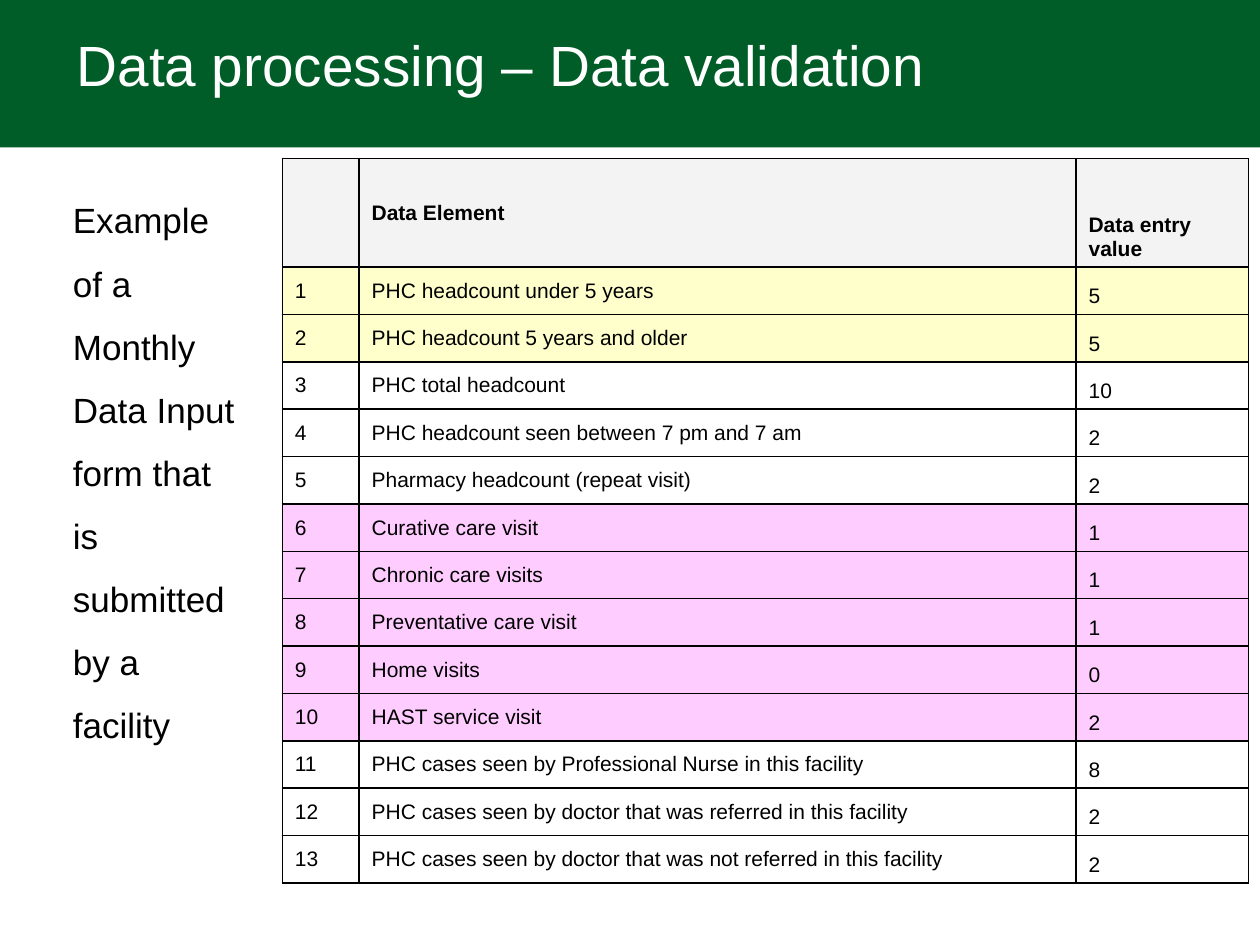
from lxml import etree
from pptx import Presentation
from pptx.dml.color import RGBColor
from pptx.enum.shapes import MSO_SHAPE
from pptx.enum.text import MSO_ANCHOR
from pptx.oxml.ns import qn
from pptx.util import Inches, Pt

RECTANGLE = MSO_SHAPE.RECTANGLE
MIDDLE, BOTTOM = MSO_ANCHOR.MIDDLE, MSO_ANCHOR.BOTTOM
COLORS = {
    "green": "005D28", "white": "FFFFFF", "black": "000000",
    "header": "F3F3F3", "yellow": "FFFFCC", "pink": "FFCCFF",
}


def add_run(para, text, size, color="black", bold=False):
    span = para.add_run()
    span.text = text
    span.font.name = "Arial"
    span.font.size = Pt(size)
    span.font.bold = bold
    span.font.color.rgb = RGBColor.from_string(COLORS[color])


def add_borders(cell):
    props = cell._tc.get_or_add_tcPr()
    for side in ("a:lnL", "a:lnR", "a:lnT", "a:lnB"):
        line = etree.SubElement(props, qn(side), w=str(Pt(1)))
        fill = etree.SubElement(line, qn("a:solidFill"))
        etree.SubElement(fill, qn("a:srgbClr"), val=COLORS["black"])


deck = Presentation()
deck.slide_width, deck.slide_height = Inches(10), Inches(7.5)
page = deck.slides.add_slide(deck.slide_layouts[6])

# Title band
band = page.shapes.add_shape(RECTANGLE, 0, 0, Inches(10), Inches(1.17))
band.shadow.inherit = False
band.fill.solid()
band.fill.fore_color.rgb = RGBColor.from_string(COLORS["green"])
band.line.fill.background()

# Title
title = page.shapes.add_textbox(Inches(0.51), Inches(0.14), Inches(9), Inches(0.46))
title.text_frame.word_wrap = True
title.text_frame.margin_top = Inches(0.1)
add_run(title.text_frame.paragraphs[0], "Data processing – Data validation", 32.4, "white")

# Side text with a hanging indent
side_text = page.shapes.add_textbox(Inches(0.1), Inches(1.27), Inches(1.91), Inches(6.23))
side_text.text_frame.word_wrap = True
para = side_text.text_frame.paragraphs[0]
para.line_spacing = 1.5
para_props = para._p.get_or_add_pPr()
para_props.set("marL", str(Inches(0.38)))
para_props.set("indent", str(-Inches(0.38)))
add_run(para, "\t", 24)
add_run(para, "Example of a Monthly Data Input form that is submitted by a facility", 20)

# Data entry form: element, value, row fill
elements = [
    ("PHC headcount under 5 years", 5, "yellow"),
    ("PHC headcount 5 years and older", 5, "yellow"),
    ("PHC total headcount", 10, None),
    ("PHC headcount seen between 7 pm and 7 am", 2, None),
    ("Pharmacy headcount (repeat visit)", 2, None),
    ("Curative care visit", 1, "pink"),
    ("Chronic care visits", 1, "pink"),
    ("Preventative care visit", 1, "pink"),
    ("Home visits", 0, "pink"),
    ("HAST service visit", 2, "pink"),
    ("PHC cases seen by Professional Nurse in this facility", 8, None),
    ("PHC cases seen by doctor that was referred in this facility", 2, None),
    ("PHC cases seen by doctor that was not referred in this facility", 2, None),
]
rows = [("", "Data Element", "Data entry value", "header")]
rows += [(str(number), name, str(value), fill)
         for number, (name, value, fill) in enumerate(elements, 1)]

table_height, header_height = 5.75, 0.86
form = page.shapes.add_table(len(rows), 3, Inches(2.24), Inches(1.26),
                             Inches(7.66), Inches(table_height)).table
for column, width in zip(form.columns, (0.61, 5.69, 1.37)):
    column.width = Inches(width)
for row in form.rows:
    row.height = Inches((table_height - header_height) / len(elements))
form.rows[0].height = Inches(header_height)

for row_index, (*texts, fill) in enumerate(rows):
    for column_index, text in enumerate(texts):
        cell = form.cell(row_index, column_index)
        cell.vertical_anchor = BOTTOM if column_index == 2 else MIDDLE
        add_borders(cell)
        if fill:
            cell.fill.solid()
            cell.fill.fore_color.rgb = RGBColor.from_string(COLORS[fill])
        else:
            cell.fill.background()
        if text:
            add_run(cell.text_frame.paragraphs[0], text, 12, bold=row_index == 0)

deck.save("out.pptx")
